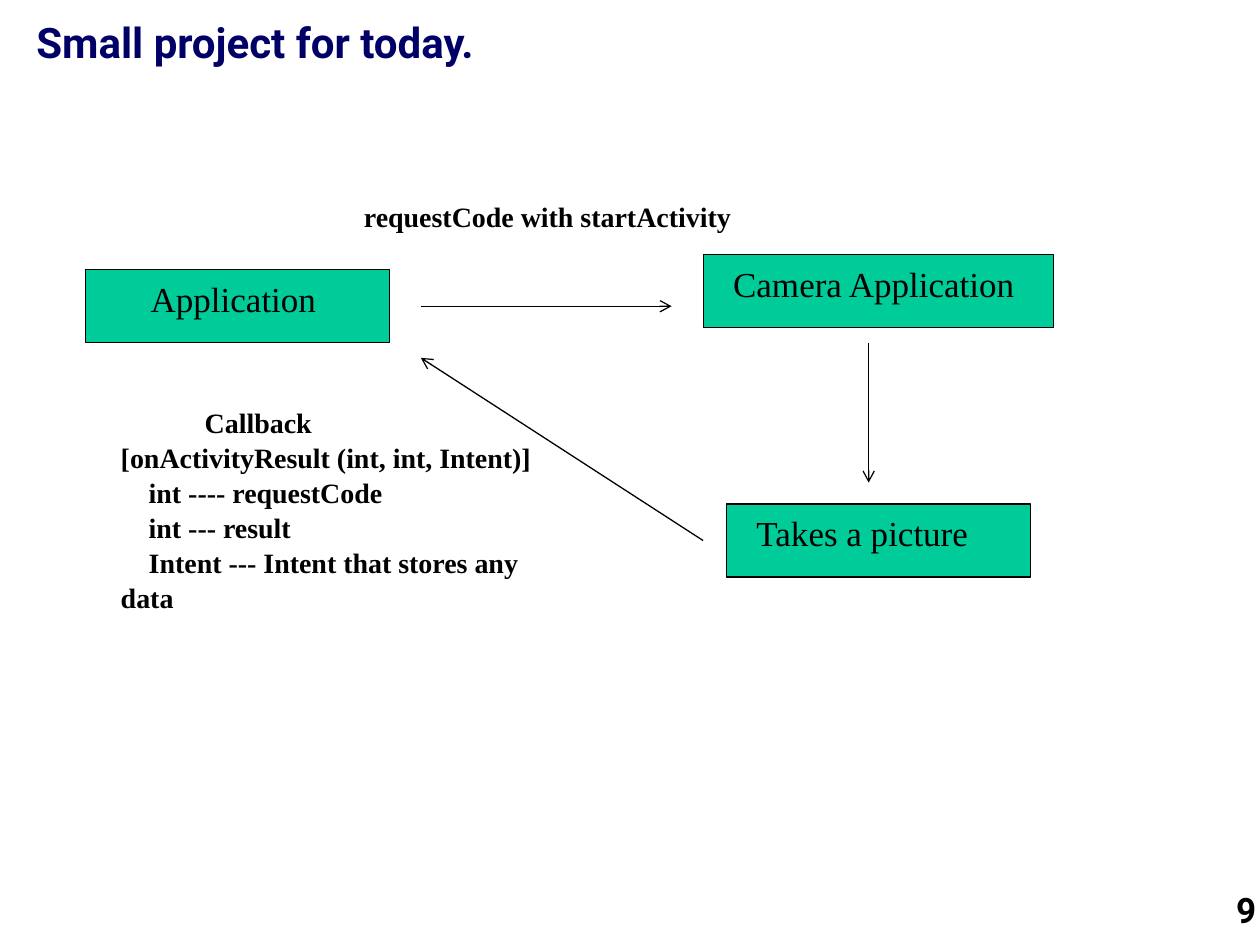
from pptx import Presentation
from pptx.dml.color import RGBColor
from pptx.enum.shapes import MSO_CONNECTOR, MSO_SHAPE
from pptx.enum.text import MSO_ANCHOR, PP_ALIGN
from pptx.oxml.ns import qn
from pptx.util import Pt
from lxml.etree import SubElement

BLACK = RGBColor(0x00, 0x00, 0x00)
NAVY = RGBColor(0x00, 0x00, 0x66)
GREEN = RGBColor(0x00, 0xCC, 0x99)
SERIF = "Times New Roman"
SANS = "Roboto"


class Sketch:
    def __init__(self, slide):
        self.slide = slide
        self.weight = Pt(0.75)
        self.leading = 1.04

    def fill_text(self, frame, lines, font, size, bold, color=BLACK,
                  align=PP_ALIGN.LEFT, anchor=MSO_ANCHOR.TOP):
        frame.word_wrap = True
        frame.vertical_anchor = anchor
        for index, (text, indent) in enumerate(lines):
            para = frame.add_paragraph() if index else frame.paragraphs[0]
            para.alignment = align
            if font == SERIF:
                para.line_spacing = self.leading
            if indent:
                props = para._p.get_or_add_pPr()
                props.set("marL", "0")
                props.set("indent", str(Pt(indent)))
            run = para.add_run()
            run.text = text
            run.font.name = font
            run.font.size = Pt(size)
            run.font.bold = bold
            run.font.color.rgb = color

    def label(self, place, lines, font, size, **style):
        box = self.slide.shapes.add_textbox(*map(Pt, place))
        self.fill_text(box.text_frame, lines, font, size, True, **style)

    def box(self, left, top, width, text, indent):
        place = map(Pt, (left, top, width, 41.8))
        shape = self.slide.shapes.add_shape(MSO_SHAPE.RECTANGLE, *place)
        shape.shadow.inherit = False
        shape.fill.solid()
        shape.fill.fore_color.rgb = GREEN
        shape.line.color.rgb = BLACK
        shape.line.width = self.weight
        self.fill_text(shape.text_frame, [(text, indent)], SERIF, 20, False)

    def arrow(self, start, end):
        line = self.slide.shapes.add_connector(
            MSO_CONNECTOR.STRAIGHT, *map(Pt, start + end))
        line.line.color.rgb = BLACK
        line.line.width = self.weight
        props = line._element.spPr
        SubElement(props.find(qn("a:ln")), qn("a:tailEnd"), type="arrow")
        SubElement(props, qn("a:effectLst"))


def main():
    deck = Presentation()
    deck.slide_width = Pt(720)
    deck.slide_height = Pt(540)
    art = Sketch(deck.slides.add_slide(deck.slide_layouts[6]))

    art.label((496.8, 504, 228.2, 36), [("9", 0)], SANS, 20,
              align=PP_ALIGN.RIGHT)
    art.label((13.7, 5.8, 699, 72), [("Small project for today.", 0)],
              SANS, 24, color=NAVY)

    art.box(49, 154.1, 173.5, "Application", 30)
    art.box(401.8, 145.4, 200.2, "Camera Application", 10)
    art.box(415.2, 288, 173.5, "Takes a picture", 10)

    art.arrow((240.5, 175), (383.8, 175))
    art.arrow((496.4, 196), (496.4, 275.8))
    art.arrow((401.8, 308.9), (240.5, 204.5))

    art.label((61.9, 227.5, 252.7, 162.7), [
        ("Callback", 48),
        ("[onActivityResult (int, int, Intent)]", 0),
        ("int ---- requestCode", 16),
        ("int --- result", 16),
        ("Intent --- Intent that stores any data", 16),
    ], SERIF, 16)
    art.label((200.9, 90.7, 252.7, 46.1),
              [("requestCode with startActivity", 0)], SERIF, 16,
              anchor=MSO_ANCHOR.BOTTOM)

    deck.save("out.pptx")


if __name__ == "__main__":
    main()
